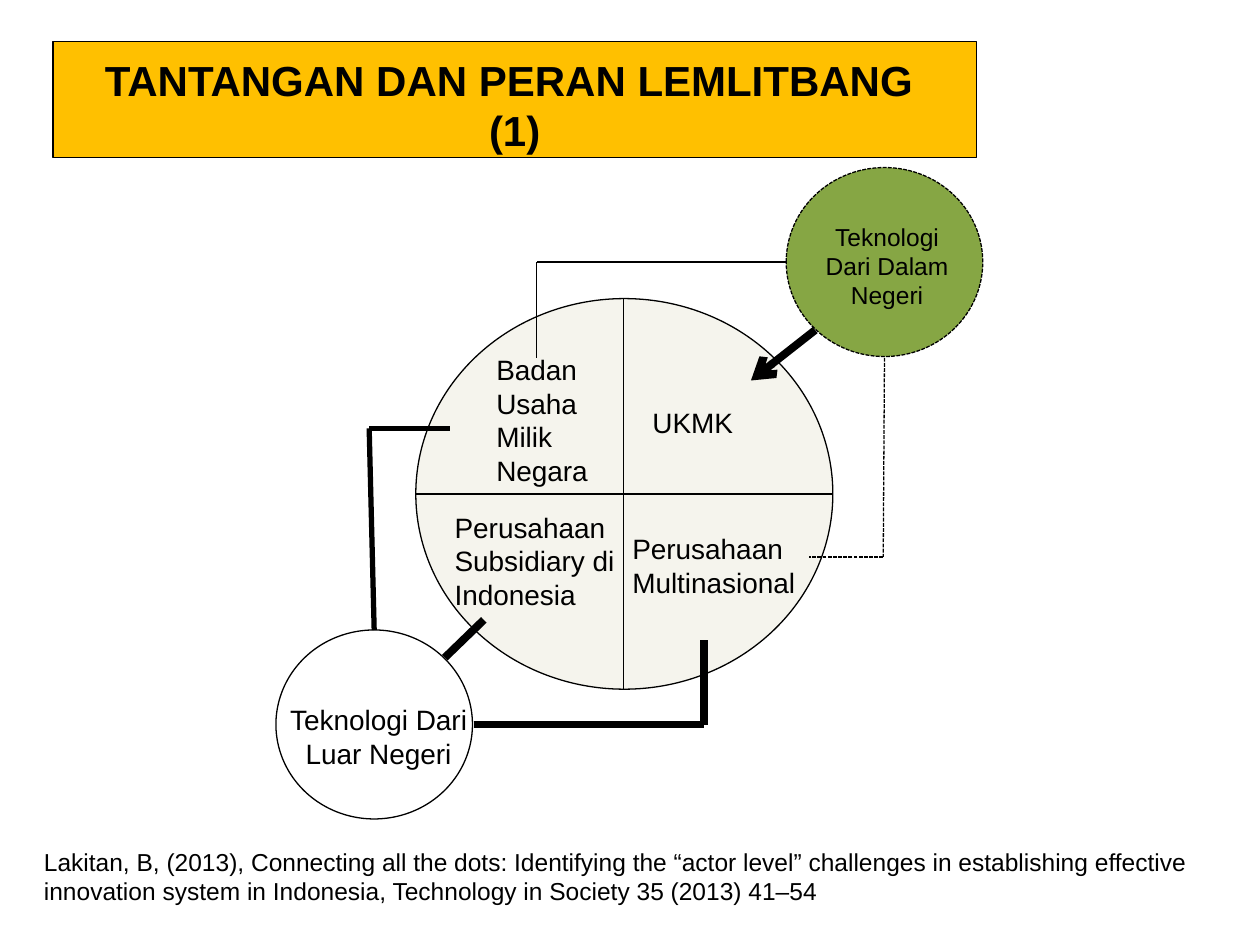
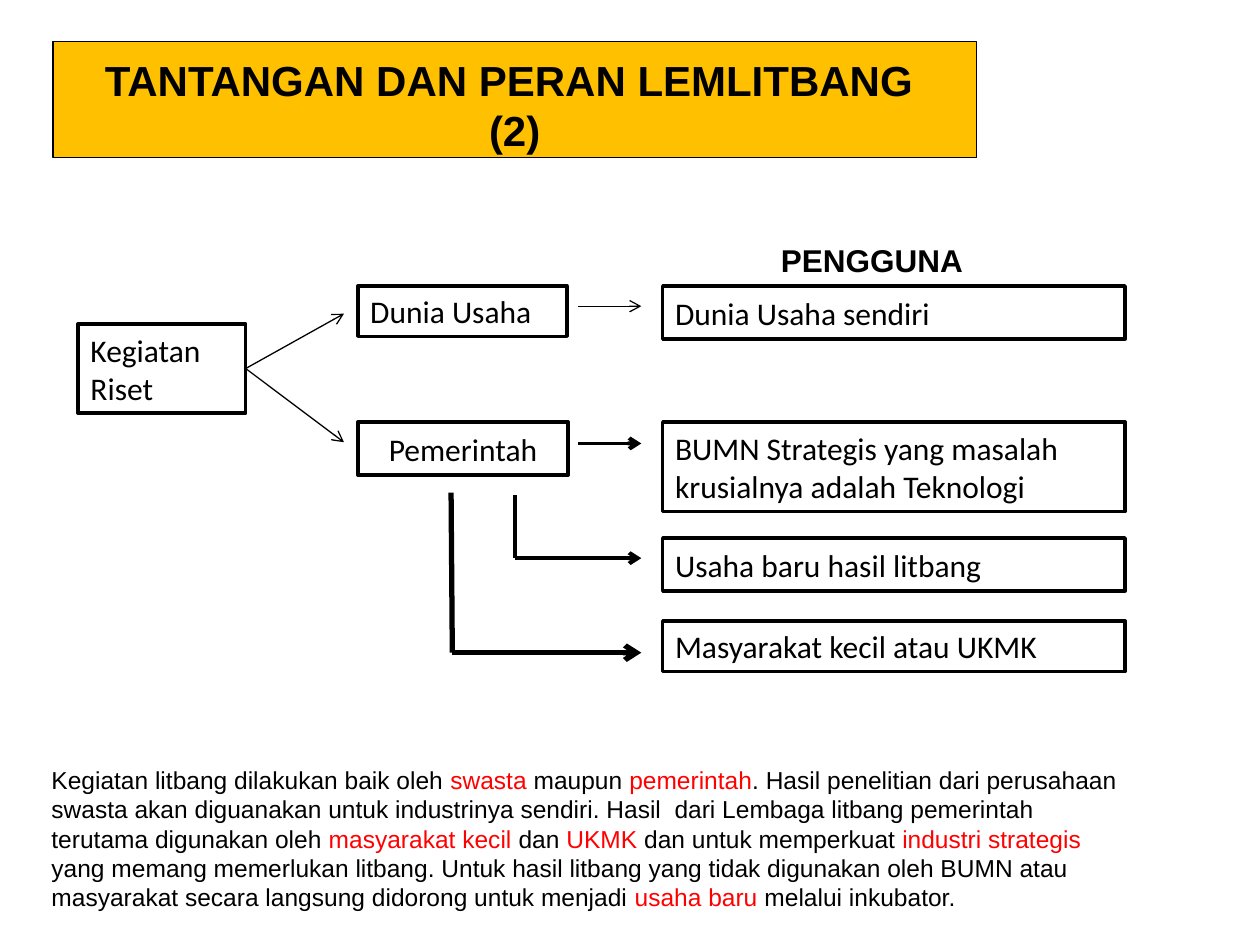
from lxml.etree import SubElement
from pptx import Presentation
from pptx.dml.color import RGBColor
from pptx.enum.dml import MSO_LINE
from pptx.enum.shapes import MSO_CONNECTOR, MSO_SHAPE
from pptx.enum.text import MSO_ANCHOR, MSO_AUTO_SIZE, PP_ALIGN
from pptx.oxml.ns import qn
from pptx.util import Inches, Pt

COLORS = {
    "ink": "000000",
    "paper": "FFFFFF",
    "band": "FFC000",
    "industry": "F5F4ED",
    "domestic": "86A644",
    "accent": "FF0000",
}
LEFT, CENTER = PP_ALIGN.LEFT, PP_ALIGN.CENTER
THIN, MEDIUM, THICK, HEAVY = 0.75, 2.25, 3, 4.5
TITLE = "TANTANGAN DAN PERAN LEMLITBANG "


def rgb(name):
    return RGBColor.from_string(COLORS[name])


def inches(*lengths):
    return [Inches(length) for length in lengths]


def paint(shape, fill, width, dashed=False):
    shape.fill.solid()
    shape.fill.fore_color.rgb = rgb(fill)
    shape.line.color.rgb = rgb("ink")
    shape.line.width = Pt(width)
    if dashed:
        shape.line.dash_style = MSO_LINE.SQUARE_DOT


def style(paragraph, size, font="Arial", align=LEFT, bold=False):
    paragraph.alignment = align
    paragraph.font.name = font
    paragraph.font.size = Pt(size)
    paragraph.font.bold = bold
    paragraph.font.color.rgb = rgb("ink")


def add_title_slide(deck, number):
    slide = deck.slides.add_slide(deck.slide_layouts[5])
    title = slide.shapes.title
    title.left, title.top, title.width, title.height = inches(0.42, 0.33, 7.33, 0.92)
    geometry = SubElement(title._element.spPr, qn("a:prstGeom"), prst="roundRect")
    SubElement(geometry, qn("a:avLst"))
    paint(title, "band", THIN)
    frame = title.text_frame
    frame.auto_size = MSO_AUTO_SIZE.NONE
    frame.vertical_anchor = MSO_ANCHOR.MIDDLE
    frame.margin_top = Inches(0.13)
    frame.text = f"{TITLE}\n({number})"
    for paragraph in frame.paragraphs:
        style(paragraph, 24, align=CENTER, bold=True)
    return slide


def add_label(slide, place, parts, size, align=LEFT, bold=False):
    frame = slide.shapes.add_textbox(*inches(*place)).text_frame
    frame.word_wrap = True
    paragraph = frame.paragraphs[0]
    for index, part in enumerate(parts):
        run = paragraph.add_run()
        run.text = part
        if index % 2:
            run.font.color.rgb = rgb("accent")
    style(paragraph, size, align=align, bold=bold)


def add_circle(slide, place, fill, dashed=False):
    circle = slide.shapes.add_shape(MSO_SHAPE.OVAL, *inches(*place))
    circle.shadow.inherit = False
    paint(circle, fill, THIN, dashed)


def add_box(slide, place, text, align=LEFT):
    box = slide.shapes.add_shape(MSO_SHAPE.RECTANGLE, *inches(*place))
    box.shadow.inherit = False
    paint(box, "paper", 2)
    frame = box.text_frame
    frame.word_wrap = True
    frame.vertical_anchor = MSO_ANCHOR.MIDDLE
    frame.text = text
    style(frame.paragraphs[0], 18, "Calibri", align)
    return box


def add_line(slide, start, end, width, arrow=False, dashed=False):
    link = slide.shapes.add_connector(MSO_CONNECTOR.STRAIGHT, *inches(*start, *end))
    link.line.color.rgb = rgb("ink")
    link.line.width = Pt(width)
    if dashed:
        link.line.dash_style = MSO_LINE.SQUARE_DOT
    if arrow:
        SubElement(link.line._get_or_add_ln(), qn("a:tailEnd"), type="arrow")
    SubElement(link._element.spPr, qn("a:effectLst"))
    return link


def add_route(slide, points, width, arrow=False, dashed=False):
    legs = list(zip(points, points[1:]))
    for index, (start, end) in enumerate(legs):
        is_last = index == len(legs) - 1
        add_line(slide, start, end, width, arrow and is_last, dashed)


def build_technology_sources(deck):
    slide = add_title_slide(deck, 1)
    add_circle(slide, (3.3, 2.37, 3.31, 3.1), "industry")
    add_line(slide, (4.95, 2.37), (4.95, 5.47), THIN)
    add_line(slide, (3.3, 3.92), (6.61, 3.92), THIN)
    add_circle(slide, (2.19, 5, 1.56, 1.5), "paper")
    add_circle(slide, (6.24, 1.33, 1.56, 1.5), "domestic", dashed=True)

    add_line(slide, (6.47, 2.62), (5.96, 3.02), HEAVY, arrow=True)
    add_route(slide, [(3.76, 5.75), (5.59, 5.75), (5.59, 5.08)], HEAVY)
    add_line(slide, (3.53, 5.22), (3.84, 4.92), HEAVY)
    add_route(slide, [(2.97, 5), (2.93, 3.4), (3.57, 3.4)], THICK)
    add_route(slide, [(6.24, 2.08), (4.26, 2.08), (4.26, 2.84)], THIN)
    add_route(slide, [(7.02, 2.84), (7.01, 4.42), (6.42, 4.42)], THIN, dashed=True)

    for place, text in [
        ((3.84, 2.75, 1.25, 1.18), "Badan Usaha Milik Negara"),
        ((5.08, 3.17, 1.13, 0.38), "UKMK"),
        ((4.92, 4.17, 1.64, 0.64), "Perusahaan Multinasional"),
        ((3.51, 4, 1.5, 0.91), "Perusahaan Subsidiary di Indonesia"),
    ]:
        add_label(slide, place, [text], 16)
    add_label(slide, (2.17, 5.53, 1.67, 0.64), ["Teknologi Dari Luar Negeri"], 16, CENTER)
    add_label(slide, (6.33, 1.71, 1.42, 0.81), ["Teknologi Dari Dalam Negeri"], 14, CENTER)
    add_label(slide, (0.25, 6.67, 9.75, 0.57), [
        "Lakitan, B, (2013), Connecting all the dots: Identifying the “actor level” "
        "challenges in establishing effective innovation system in Indonesia, "
        "Technology in Society 35 (2013) 41–54"], 14)


def build_research_users(deck):
    slide = add_title_slide(deck, 2)
    research = add_box(slide, (0.62, 2.57, 1.33, 0.71), "Kegiatan Riset")
    add_box(slide, (2.84, 2.27, 1.66, 0.4), "Dunia Usaha")
    add_box(slide, (2.84, 3.35, 1.67, 0.42), "Pemerintah", CENTER)
    for top, height, user in [
        (2.27, 0.42, "Dunia Usaha sendiri"),
        (3.35, 0.71, "BUMN Strategis yang masalah krusialnya adalah Teknologi"),
        (4.27, 0.42, "Usaha baru hasil litbang"),
        (4.93, 0.4, "Masyarakat kecil atau UKMK"),
    ]:
        add_box(slide, (5.26, top, 3.67, height), user)

    for performer_y in (2.49, 3.51):
        branch = add_line(slide, (1.95, 2.93), (2.73, performer_y), THIN, arrow=True)
        branch.begin_connect(research, 3)
    add_line(slide, (4.59, 2.43), (5.09, 2.43), THIN, arrow=True)
    add_line(slide, (4.59, 3.52), (5.09, 3.52), MEDIUM, arrow=True)
    add_route(slide, [(4.09, 3.93), (4.09, 4.43), (5.09, 4.43)], MEDIUM, arrow=True)
    add_route(slide, [(3.58, 3.91), (3.59, 5.18), (5.09, 5.18)], THICK, arrow=True)

    add_label(slide, (6.1, 1.86, 1.66, 0.39), ["PENGGUNA"], 18, bold=True)
    add_label(slide, (0.31, 6.02, 8.75, 1.28), [
        "Kegiatan litbang dilakukan baik oleh ",
        "swasta",
        " maupun ",
        "pemerintah",
        ". Hasil penelitian dari perusahaan swasta akan diguanakan untuk industrinya "
        "sendiri. Hasil  dari Lembaga litbang pemerintah terutama digunakan oleh ",
        "masyarakat kecil ",
        "dan ",
        "UKMK",
        " dan untuk memperkuat ",
        "industri strategis ",
        "yang memang memerlukan litbang. Untuk hasil litbang yang tidak digunakan oleh "
        "BUMN atau masyarakat secara langsung didorong untuk menjadi ",
        "usaha baru ",
        "melalui inkubator.",
    ], 14)


def main():
    deck = Presentation()
    deck.slide_width, deck.slide_height = inches(10, 7.5)
    build_technology_sources(deck)
    build_research_users(deck)
    deck.save("out.pptx")


if __name__ == "__main__":
    main()
